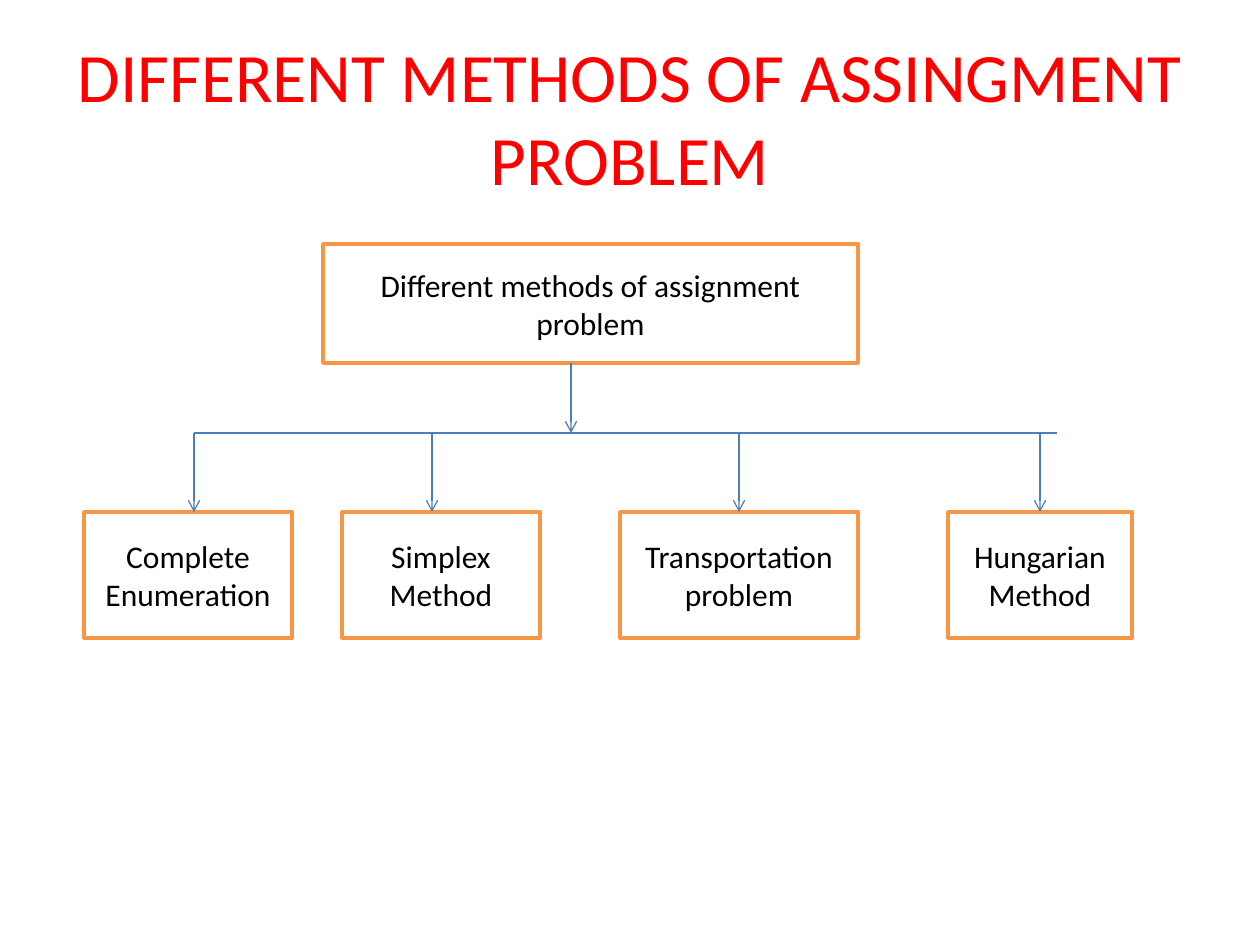
from lxml.etree import SubElement
from pptx import Presentation
from pptx.dml.color import RGBColor
from pptx.enum.shapes import MSO_CONNECTOR, MSO_SHAPE
from pptx.enum.text import MSO_ANCHOR, PP_ALIGN
from pptx.oxml.ns import qn
from pptx.util import Pt

EMU_PER_PX = 914400 / 126
TOP_SIDE = 0


def px(n):
    return round(n * EMU_PER_PX)


def color(hex_value):
    return RGBColor.from_string(hex_value)


class Diagram:
    """Holds the style and the current slide."""
    font = "Calibri"
    title_color, text_color = "FF0000", "000000"
    box_fill, box_line, arrow_color = "FFFFFF", "F79646", "4B7EBC"

    def __init__(self, prs):
        self.slide = prs.slides.add_slide(prs.slide_layouts[5])

    def set_text(self, sp, text, size, hex_value):
        tf = sp.text_frame
        tf.word_wrap = True
        tf.vertical_anchor = MSO_ANCHOR.MIDDLE
        p = tf.paragraphs[0]
        p.text = text
        p.alignment = PP_ALIGN.CENTER
        p.font.name = self.font
        p.font.size = Pt(size)
        p.font.color.rgb = color(hex_value)

    def title(self, text, x, y, w, h):
        sp = self.slide.shapes.title
        sp.left, sp.top, sp.width, sp.height = px(x), px(y), px(w), px(h)
        self.set_text(sp, text, 39.6, self.title_color)

    def box(self, text, x, y, w, h):
        sp = self.slide.shapes.add_shape(
            MSO_SHAPE.RECTANGLE, px(x), px(y), px(w), px(h))
        sp.shadow.inherit = False
        sp.fill.solid()
        sp.fill.fore_color.rgb = color(self.box_fill)
        sp.line.color.rgb = color(self.box_line)
        sp.line.width = Pt(2)
        self.set_text(sp, text, 18, self.text_color)
        return sp

    def line(self, x1, y1, x2, y2, arrow=False):
        cx = self.slide.shapes.add_connector(
            MSO_CONNECTOR.STRAIGHT, px(x1), px(y1), px(x2), px(y2))
        cx.line.color.rgb = color(self.arrow_color)
        cx.line.width = Pt(0.75)
        sp_pr = cx._element.spPr
        if arrow:
            SubElement(sp_pr.find(qn("a:ln")), qn("a:tailEnd"), type="arrow")
        SubElement(sp_pr, qn("a:effectLst"))
        return cx


def main():
    prs = Presentation()
    prs.slide_width, prs.slide_height = px(1260), px(945)
    d = Diagram(prs)
    d.title("DIFFERENT METHODS OF ASSINGMENT PROBLEM", 63, 38, 1134, 157)

    # Root box, its arrow and the horizontal bus
    root_x, root_bottom, bus_y = 571, 363, 433
    d.box("Different methods of assignment problem",
          323, 244, 535, root_bottom - 244)
    d.line(root_x, root_bottom, root_x, bus_y, arrow=True)
    d.line(root_x, bus_y, 1057, bus_y)
    d.line(root_x, bus_y, 194, bus_y)

    # Method boxes: text, left, width, arrow x
    box_y, box_h = 512, 126
    methods = [
        ("Complete Enumeration", 84, 208, 194),
        ("Simplex Method", 342, 198, 432),
        ("Transportation problem", 620, 238, 739),
        ("Hungarian Method", 948, 184, 1040),
    ]
    for text, x, w, arrow_x in methods:
        sp = d.box(text, x, box_y, w, box_h)
        cx = d.line(arrow_x, bus_y, arrow_x, box_y, arrow=True)
        if arrow_x == x + w // 2:
            cx.end_connect(sp, TOP_SIDE)

    prs.save("out.pptx")


if __name__ == "__main__":
    main()
